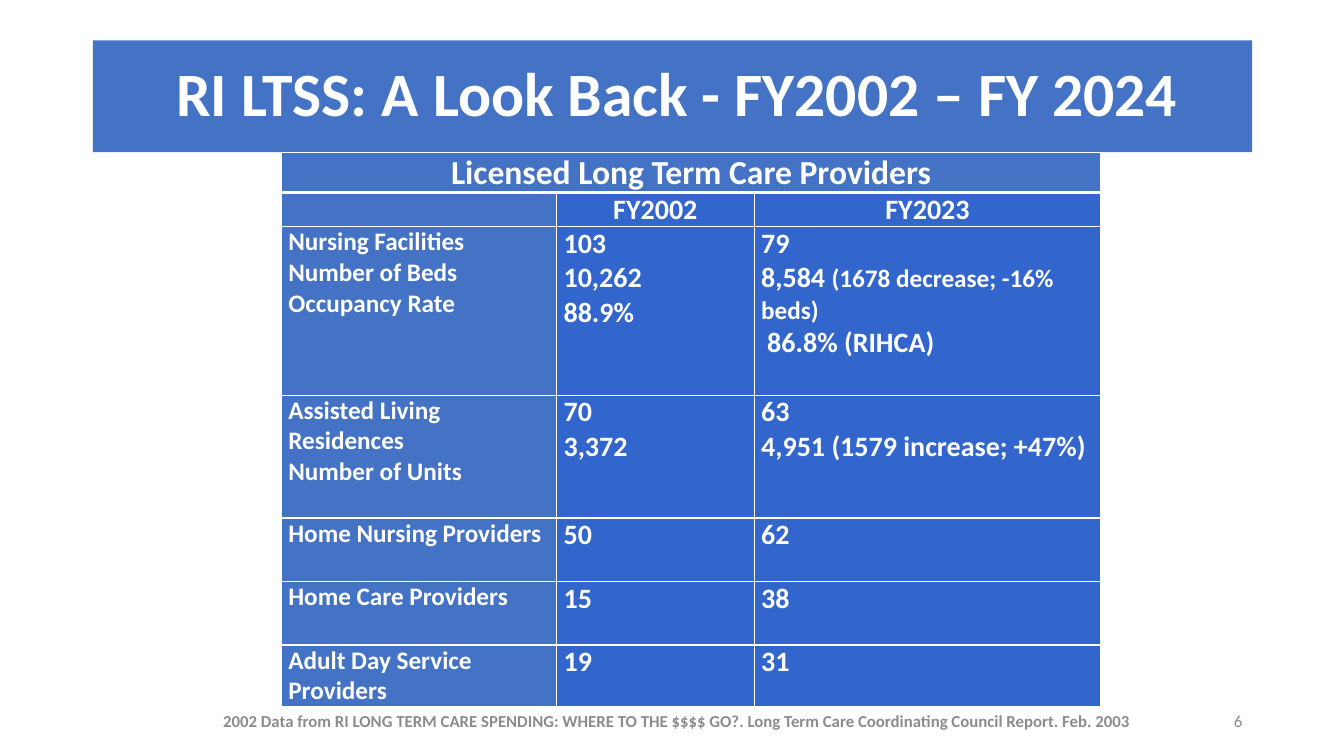
import pptx
import pptx.util
import pptx.dml.color
import pptx.enum.text
import pptx.oxml
import lxml.etree

Inches = pptx.util.Inches
Pt = pptx.util.Pt
Align = pptx.enum.text.PP_ALIGN
Anchor = pptx.enum.text.MSO_ANCHOR
WHITE, GREY, BLUE, DEEP = "FFFFFF", "8C8C8C", "4472C4", "3366CC"


def paint(target, color):
    if hasattr(target, "solid"):
        target.solid()
        target = target.fore_color
    target.rgb = pptx.dml.color.RGBColor.from_string(color)


def style(para, size, color, bold, align):
    para.alignment = align
    para.font.name = "Calibri"
    para.font.size = Pt(size)
    para.font.bold = bold
    paint(para.font.color, color)


deck = pptx.Presentation()
deck.slide_width = Inches(13.33)
deck.slide_height = Inches(7.5)
slide = deck.slides.add_slide(deck.slide_layouts[5])

title = slide.shapes.title
title.left, title.top = Inches(0.92), Inches(0.4)
title.width, title.height = Inches(11.5), Inches(1.11)
paint(title.fill, BLUE)
frame = title.text_frame
frame.text = "RI LTSS: A Look Back - FY2002 – FY 2024"
frame.vertical_anchor = Anchor.MIDDLE
frame.margin_left = Inches(0.2)
frame.auto_size = pptx.enum.text.MSO_AUTO_SIZE.NONE
frame.paragraphs[0].line_spacing = 0.9
style(frame.paragraphs[0], 44, WHITE, True, Align.CENTER)

source = ("2002 Data from RI LONG TERM CARE SPENDING: WHERE TO THE $$$$ GO?. "
          "Long Term Care Coordinating Council Report. Feb. 2003")
for left, width, text, bold, align in [
    (1.96, 9.51, source, True, Align.CENTER),
    (9.42, 3, "6", False, Align.RIGHT),
]:
    box = slide.shapes.add_textbox(Inches(left), Inches(6.95), Inches(width), Inches(0.4))
    frame = box.text_frame
    frame.word_wrap = True
    frame.vertical_anchor = Anchor.MIDDLE
    frame.text = text
    style(frame.paragraphs[0], 12, GREY, bold, align)

rows = [
    (0.4, ["Licensed Long Term Care Providers", "", ""]),
    (0.34, ["", "FY2002", "FY2023"]),
    (1.67, ["Nursing Facilities\nNumber of Beds\nOccupancy Rate",
            "103\n10,262\n88.9%",
            "79\n8,584 \n86.8% (RIHCA)"]),
    (1.22, ["Assisted Living Residences\nNumber of Units",
            "70\n3,372",
            "63\n4,951 (1579 increase; +47%)"]),
    (0.63, ["Home Nursing Providers", "50", "62"]),
    (0.63, ["Home Care Providers", "15", "38"]),
    (0.61, ["Adult Day Service Providers", "19", "31"]),
]
widths = [2.73, 1.96, 3.44]
high = sum(height for height, texts in rows)
table = slide.shapes.add_table(len(rows), len(widths), Inches(2.79), Inches(1.51),
                               Inches(sum(widths)), Inches(high)).table
for col, width in zip(table.columns, widths):
    col.width = Inches(width)

for r, (height, texts) in enumerate(rows):
    table.rows[r].height = Inches(height)
    for c, text in enumerate(texts):
        cell = table.cell(r, c)
        cell.margin_left = cell.margin_right = Inches(0.07)
        cell.margin_top = cell.margin_bottom = 0
        cell.text = text
        size = 24 if r == 0 else 18 if c == 0 else 20
        for para in cell.text_frame.paragraphs:
            style(para, size, WHITE, True, Align.CENTER if r < 2 else Align.LEFT)
        props = cell._tc.get_or_add_tcPr()
        for side in "LRTB":
            thick = (r, side) in [(0, "B"), (1, "T")]
            line = lxml.etree.SubElement(props, pptx.oxml.ns.qn("a:ln" + side),
                                         w=str(Pt(3 if thick else 1)))
            fill = lxml.etree.SubElement(line, pptx.oxml.ns.qn("a:solidFill"))
            lxml.etree.SubElement(fill, pptx.oxml.ns.qn("a:srgbClr"), val=WHITE)
        paint(cell.fill, BLUE if r == 0 or c == 0 else DEEP)
table.cell(0, 0).merge(table.cell(0, 2))

beds, rate = table.cell(2, 2).text_frame.paragraphs[1:]
note = beds.add_run()
note.text = "(1678 decrease; -16% beds)"
note.font.size = Pt(18)
rate._p.get_or_add_pPr().set("marL", str(Inches(0.06)))

deck.save("out.pptx")
